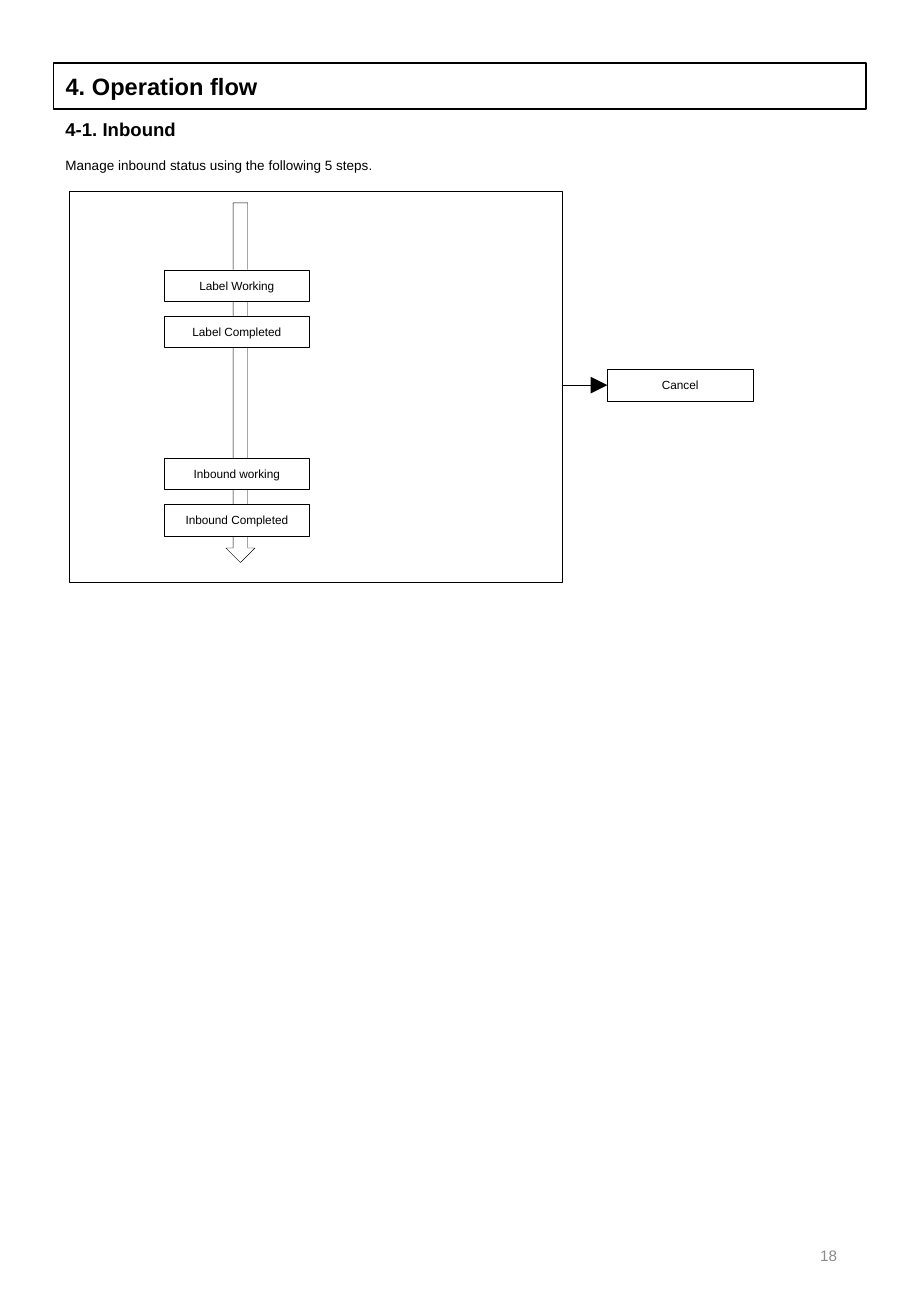
from lxml import etree
from pptx import Presentation
from pptx.dml.color import RGBColor
from pptx.enum.shapes import MSO_CONNECTOR, MSO_SHAPE
from pptx.enum.text import MSO_ANCHOR, MSO_AUTO_SIZE, PP_ALIGN
from pptx.oxml.ns import qn
from pptx.util import Inches, Pt

BLACK = RGBColor(0x00, 0x00, 0x00)
WHITE = RGBColor(0xFF, 0xFF, 0xFF)
GRAY = RGBColor(0x8C, 0x8C, 0x8C)
FONT = "Arial"
RECT, DOWN_ARROW = MSO_SHAPE.RECTANGLE, MSO_SHAPE.DOWN_ARROW
STRAIGHT = MSO_CONNECTOR.STRAIGHT
LEFT, CENTER, RIGHT = PP_ALIGN.LEFT, PP_ALIGN.CENTER, PP_ALIGN.RIGHT
TOP, MIDDLE = MSO_ANCHOR.TOP, MSO_ANCHOR.MIDDLE
NO_AUTOFIT = MSO_AUTO_SIZE.NONE

STEP_W, STEP_H = 1.2, 0.26
# Step name and its distance from the top of the flow frame
STEPS = [
    ("Label Working", 0.65),
    ("Label Completed", 1.03),
    ("Inbound working", 2.2),
    ("Inbound Completed", 2.58),
]


def write(shape, text, size, align=LEFT, anchor=MIDDLE, bold=False, color=BLACK):
    tf = shape.text_frame
    tf.text = text
    tf.word_wrap = True
    tf.auto_size = NO_AUTOFIT
    tf.vertical_anchor = anchor
    p = tf.paragraphs[0]
    p.alignment = align
    font = p.runs[0].font
    font.name, font.size, font.bold = FONT, Pt(size), bold
    font.color.rgb = color


def add_text(s, box, text, size, **style):
    write(s.shapes.add_textbox(*map(Inches, box)), text, size, **style)


def add_outlined(s, kind, box):
    """Add a white shape with a thin black outline."""
    shape = s.shapes.add_shape(kind, *map(Inches, box))
    shape.shadow.inherit = False
    shape.fill.solid()
    shape.fill.fore_color.rgb = WHITE
    shape.line.color.rgb = BLACK
    shape.line.width = Pt(0.25)
    return shape


def add_step(s, left, top, text):
    box = add_outlined(s, RECT, (left, top, STEP_W, STEP_H))
    write(box, text, 7, align=CENTER)


def add_heading(s, left, top, width):
    title = s.shapes.title
    title.left, title.top = Inches(left), Inches(top)
    title.width, title.height = Inches(width), Inches(0.38)
    title.line.color.rgb = BLACK
    title.line.width = Pt(1)
    write(title, "4. Operation flow", 14, bold=True)
    add_text(s, (left, top + 0.4, width, 0.29), "4-1. Inbound", 11,
             anchor=TOP, bold=True)
    add_text(s, (left, top + 0.72, width, 0.24),
             "Manage inbound status using the following 5 steps.", 8, anchor=TOP)


def add_inbound_flow(s, left, top, width, height):
    add_outlined(s, RECT, (left, top, width, height))
    add_outlined(s, DOWN_ARROW, (left + 1.29, top + 0.1, 0.24, 2.96))
    for text, offset in STEPS:
        add_step(s, left + 0.78, top + offset, text)


def add_cancel_branch(s, left, middle, gap):
    """Draw an arrow from (left, middle) across the gap to the Cancel box."""
    arrow = s.shapes.add_connector(STRAIGHT, Inches(left), Inches(middle),
                                   Inches(left + gap), Inches(middle))
    arrow.line.color.rgb = BLACK
    arrow.line.width = Pt(0.5)
    line = arrow.line._get_or_add_ln()
    etree.SubElement(line, qn("a:tailEnd"), type="triangle", w="lg", len="lg")
    etree.SubElement(arrow._element.spPr, qn("a:effectLst"))
    add_step(s, left + gap, middle - STEP_H / 2, "Cancel")


def add_page_number(s, box):
    add_text(s, box, "18", 9, align=RIGHT, color=GRAY)


def main():
    prs = Presentation()
    prs.slide_width, prs.slide_height = Inches(7.5), Inches(10.83)
    s = prs.slides.add_slide(prs.slide_layouts[5])
    add_heading(s, 0.44, 0.52, 6.69)
    add_inbound_flow(s, 0.57, 1.57, 4.06, 3.22)
    add_cancel_branch(s, 4.63, 3.17, 0.37)
    add_page_number(s, (5.3, 10.04, 1.69, 0.58))
    prs.save("out.pptx")


if __name__ == "__main__":
    main()
